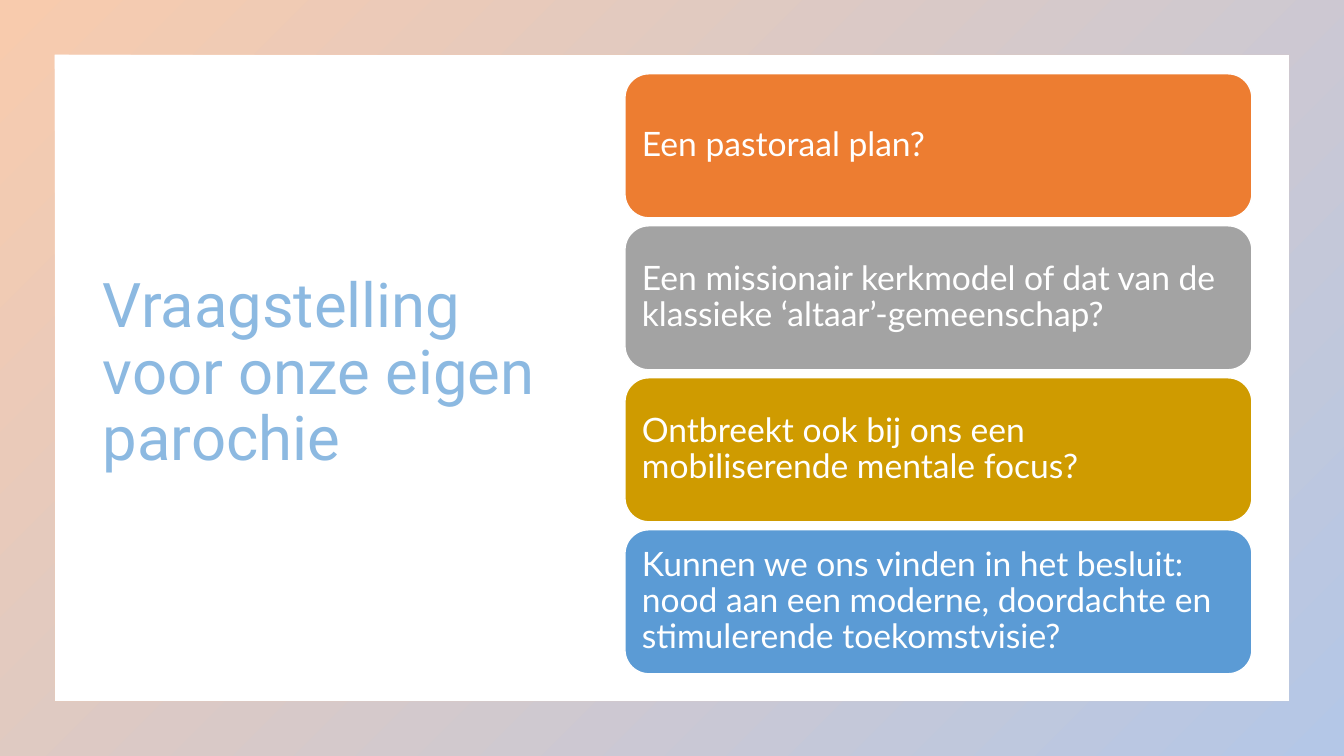
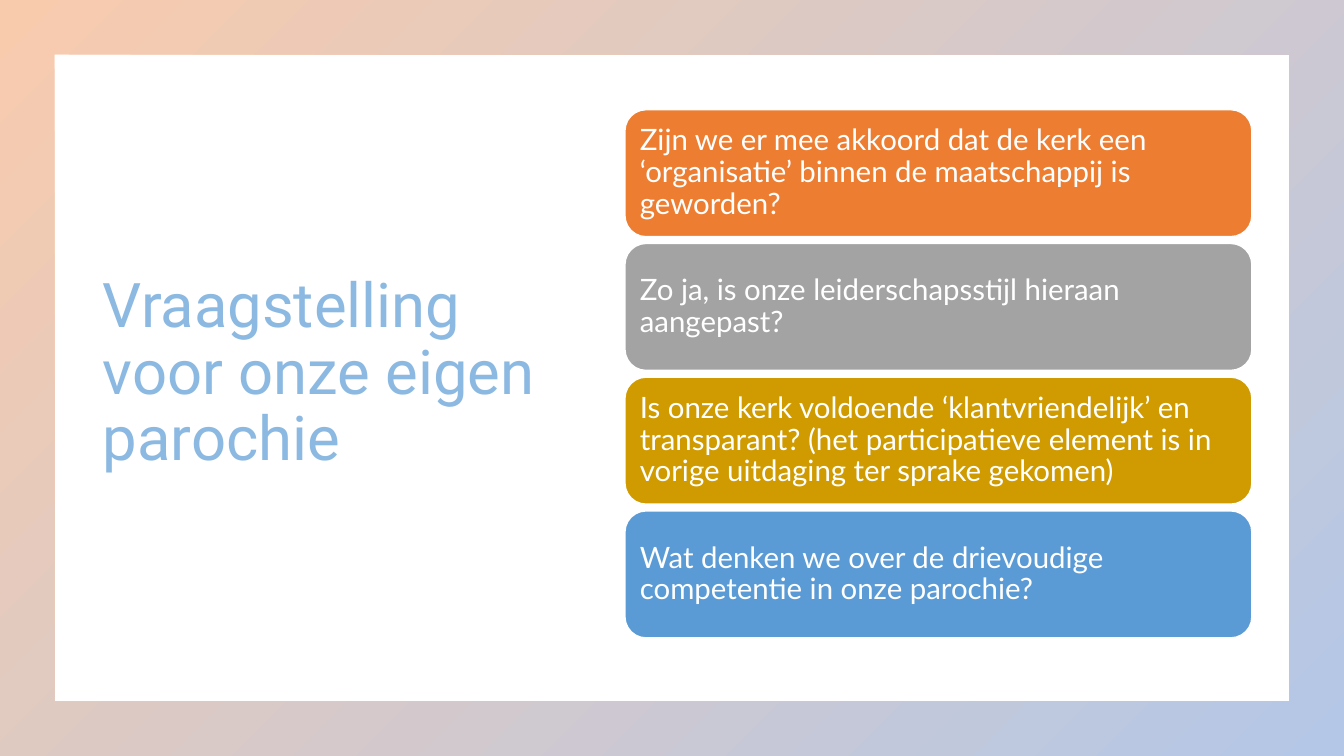
from pptx import Presentation
from pptx.dml.color import RGBColor
from pptx.enum.shapes import MSO_SHAPE
from pptx.enum.text import MSO_ANCHOR, MSO_AUTO_SIZE, PP_ALIGN
from pptx.util import Cm, Pt

FRAME, ROUNDED = MSO_SHAPE.FRAME, MSO_SHAPE.ROUNDED_RECTANGLE
MIDDLE, LEFT, NO_AUTOFIT = MSO_ANCHOR.MIDDLE, PP_ALIGN.LEFT, MSO_AUTO_SIZE.NONE
TITLE_ONLY = 5

TITLE = "Vraagstelling voor onze eigen parochie"
PLAN_QUESTIONS = [
    "Een pastoraal plan?",
    "Een missionair kerkmodel of dat van de klassieke ‘altaar’-gemeenschap?",
    "Ontbreekt ook bij ons een mobiliserende mentale focus?",
    "Kunnen we ons vinden in het besluit: nood aan een moderne, doordachte "
    "en stimulerende toekomstvisie?",
]
LEADERSHIP_QUESTIONS = [
    "Zijn we er mee akkoord dat de kerk een ‘organisatie’ binnen de "
    "maatschappij is geworden?",
    "Zo ja, is onze leiderschapsstijl hieraan aangepast?",
    "Is onze kerk voldoende ‘klantvriendelijk’ en transparant? (het "
    "participatieve element is in vorige uitdaging ter sprake gekomen)",
    "Wat denken we over de drievoudige competentie in onze parochie?",
]


def rgb(hex_color):
    return RGBColor.from_string(hex_color)


def write(shape, text, font, size, color, inset=0.25):
    """Fill a shape with left-aligned, vertically centred text."""
    frame = shape.text_frame
    frame.word_wrap = True
    frame.auto_size = NO_AUTOFIT
    frame.vertical_anchor = MIDDLE
    frame.margin_left = frame.margin_right = Cm(inset)
    frame.margin_top = frame.margin_bottom = Cm(inset)
    paragraph = frame.paragraphs[0]
    paragraph.alignment = LEFT
    paragraph.line_spacing = 0.9
    run = paragraph.add_run()
    run.text = text
    run.font.name = font
    run.font.size = Pt(size)
    run.font.color.rgb = rgb(color)


class Deck:
    """Shared style, and the slide being built."""

    WIDTH, HEIGHT = 33.87, 19.05
    WHITE, TITLE_BLUE = "FFFFFF", "8CB9E1"
    FRAME_COLORS = ["F8CBAD", "B4C7E7"]
    CARD_COLORS = ["ED7D31", "A3A3A3", "CF9B00", "5B9BD5"]
    TITLE_FONT, BODY_FONT = "Roboto", "Lato"
    CARD_LEFT, CARD_WIDTH, CARDS_MIDDLE = 15.75, 15.8, 9.42

    def __init__(self):
        self.presentation = Presentation()
        self.presentation.slide_width = Cm(self.WIDTH)
        self.presentation.slide_height = Cm(self.HEIGHT)
        self.slide = None

    def new_slide(self, title):
        layout = self.presentation.slide_layouts[TITLE_ONLY]
        self.slide = self.presentation.slides.add_slide(layout)
        background = self.slide.background.fill
        background.solid()
        background.fore_color.rgb = rgb(self.WHITE)
        self.frame()
        self.title(title)

    def shape(self, preset, left, top, width, height):
        shape = self.slide.shapes.add_shape(
            preset, Cm(left), Cm(top), Cm(width), Cm(height))
        shape.shadow.inherit = False
        return shape

    def frame(self):
        border = self.shape(FRAME, 0, 0, self.WIDTH, self.HEIGHT)
        border.adjustments[0] = 0.072
        border.line.fill.background()
        border.fill.gradient()
        border.fill.gradient_angle = 315
        for stop, color in zip(border.fill.gradient_stops, self.FRAME_COLORS):
            stop.color.rgb = rgb(color)

    def title(self, text):
        title = self.slide.shapes.title
        title.left, title.top = Cm(2.34), Cm(1.7)
        title.width, title.height = Cm(12.34), Cm(15.47)
        write(title, text, self.TITLE_FONT, 44, self.TITLE_BLUE)

    def card(self, text, color, top, height, size, inset):
        card = self.shape(ROUNDED, self.CARD_LEFT, top, self.CARD_WIDTH, height)
        card.fill.solid()
        card.fill.fore_color.rgb = rgb(color)
        card.line.color.rgb = rgb(self.WHITE)
        card.line.width = Pt(1)
        write(card, text, self.BODY_FONT, size, self.WHITE, inset)

    def cards(self, texts, height, gap, size, inset):
        """Stack equal cards around a fixed middle."""
        pitch = height + gap
        top = self.CARDS_MIDDLE - (len(texts) * pitch - gap) / 2
        for row, (text, color) in enumerate(zip(texts, self.CARD_COLORS)):
            self.card(text, color, top + row * pitch, height, size, inset)


def main():
    deck = Deck()
    deck.new_slide(TITLE)
    deck.cards(PLAN_QUESTIONS, height=3.63, gap=0.2, size=24, inset=0.25)
    deck.new_slide(TITLE)
    deck.cards(LEADERSHIP_QUESTIONS, height=3.2, gap=0.17, size=21, inset=0.22)
    deck.presentation.save("out.pptx")


if __name__ == "__main__":
    main()
